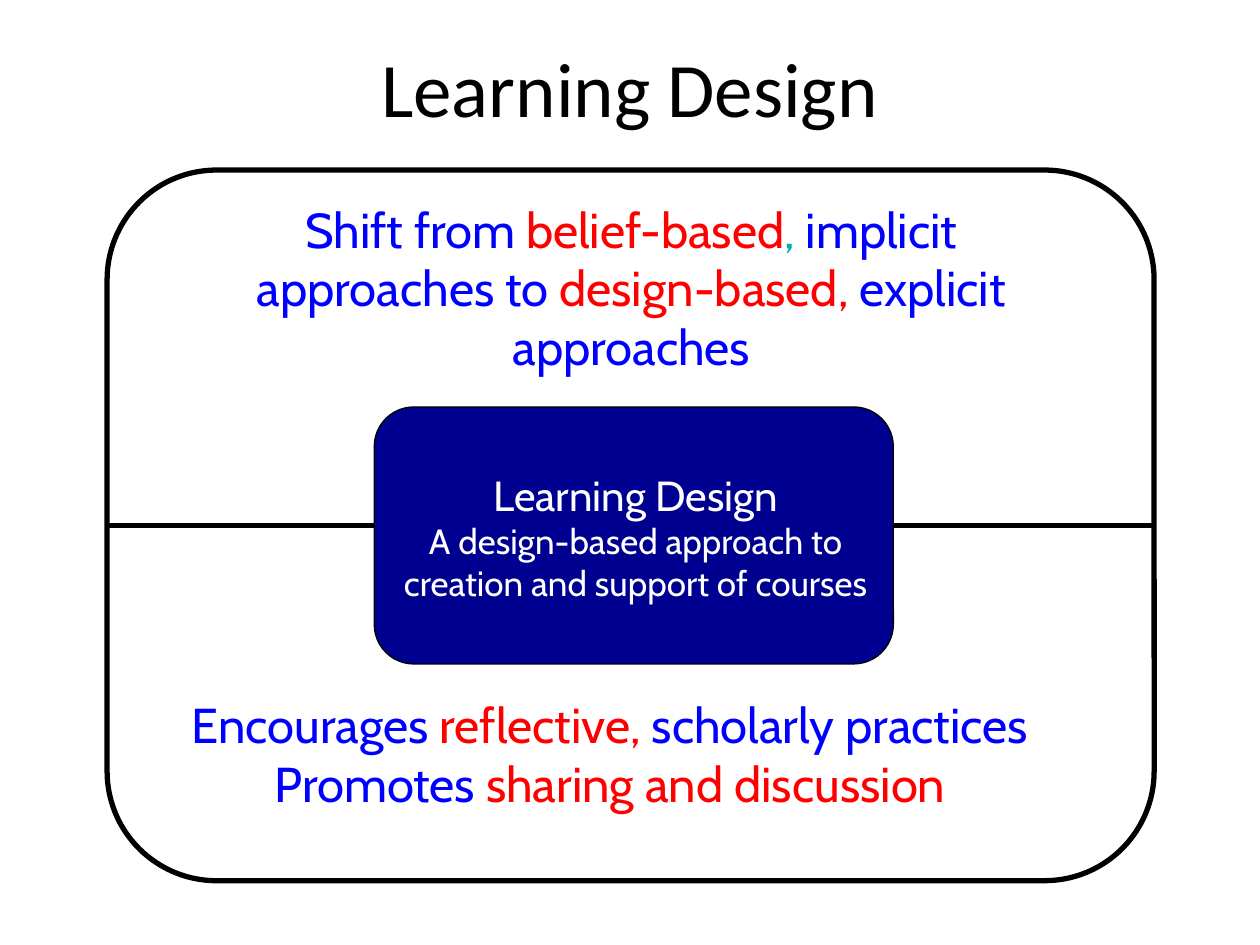
from dataclasses import dataclass

from lxml import etree
from pptx import Presentation
from pptx.dml.color import RGBColor
from pptx.enum.shapes import MSO_CONNECTOR, MSO_SHAPE
from pptx.enum.text import MSO_ANCHOR, PP_ALIGN
from pptx.oxml.ns import qn
from pptx.util import Inches, Pt

ROUNDED = MSO_SHAPE.ROUNDED_RECTANGLE
STRAIGHT = MSO_CONNECTOR.STRAIGHT
TOP = MSO_ANCHOR.TOP
MIDDLE = MSO_ANCHOR.MIDDLE
CENTER = PP_ALIGN.CENTER

BLACK = "000000"
WHITE = "FFFFFF"
BLUE = "0000FF"
RED = "FF0000"
TEAL = "00AFAD"
NAVY = "000090"
CORNER = 0.154


@dataclass(frozen=True)
class Area:
    left: float
    top: float
    width: float
    height: float

    def lengths(self) -> tuple:
        return tuple(map(Inches, (self.left, self.top, self.width, self.height)))


@dataclass(frozen=True)
class Span:
    text: str
    color: str
    size: int = 28


@dataclass(frozen=True)
class Label:
    area: Area
    lines: list[list[Span]]
    anchor: MSO_ANCHOR = TOP
    font: str = "Cabin"
    margin: float = 0.04


@dataclass(frozen=True)
class Panel:
    area: Area
    line_width: float
    fill: str | None = None


TITLE = Label(
    Area(0.5, 0.27, 9, 0.84),
    [[Span("Learning Design", BLACK, 44)]],
    MIDDLE, "Calibri", 0.1,
)
SHIFT = Label(
    Area(1.95, 1.54, 6.12, 1.42),
    [[
        Span("Shift from ", BLUE),
        Span("belief-based", RED),
        Span(", ", TEAL),
        Span("implicit approaches to ", BLUE),
        Span("design-based, ", RED),
        Span("explicit approaches", BLUE),
    ]],
)
PRACTICES = Label(
    Area(1.46, 5.47, 6.76, 0.97),
    [
        [
            Span("Encourages ", BLUE),
            Span("reflective, ", RED),
            Span("scholarly practices", BLUE),
        ],
        [Span("Promotes ", BLUE), Span("sharing and discussion", RED)],
    ],
)
DEFINITION = Label(
    Area(3.07, 3.69, 3.95, 1.14),
    [
        [Span("Learning Design", WHITE, 24)],
        [Span("A design-based approach to creation and support of courses", WHITE, 20)],
    ],
    MIDDLE,
)
FRAME = Panel(Area(0.85, 1.35, 8.31, 5.64), 3)
CORE = Panel(Area(2.97, 3.23, 4.12, 2.04), 0.75, NAVY)


def rgb(value: str) -> RGBColor:
    return RGBColor.from_string(value)


def draw_label(page, label: Label) -> None:
    frame = page.shapes.add_textbox(*label.area.lengths()).text_frame
    frame.word_wrap = True
    frame.vertical_anchor = label.anchor
    frame.margin_left = frame.margin_right = Inches(label.margin)
    frame.margin_top = frame.margin_bottom = Inches(min(label.margin, 0.05))
    for index, line in enumerate(label.lines):
        para = frame.add_paragraph() if index else frame.paragraphs[0]
        para.alignment = CENTER
        for span in line:
            run = para.add_run()
            run.text = span.text
            run.font.name = label.font
            run.font.size = Pt(span.size)
            run.font.color.rgb = rgb(span.color)


def draw_panel(page, panel: Panel) -> None:
    box = page.shapes.add_shape(ROUNDED, *panel.area.lengths())
    box.adjustments[0] = CORNER
    box.shadow.inherit = False
    box.line.color.rgb = rgb(BLACK)
    box.line.width = Pt(panel.line_width)
    if panel.fill:
        box.fill.solid()
        box.fill.fore_color.rgb = rgb(panel.fill)
    else:
        box.fill.background()


def draw_divider(page, frame: Area) -> None:
    middle = Inches(frame.top + frame.height / 2)
    left, right = Inches(frame.left), Inches(frame.left + frame.width)
    divider = page.shapes.add_connector(STRAIGHT, left, middle, right, middle)
    divider.line.color.rgb = rgb(BLACK)
    divider.line.width = Pt(3)
    properties = divider._element.find(qn("p:spPr"))
    etree.SubElement(properties, qn("a:effectLst"))


def main() -> None:
    deck = Presentation()
    deck.slide_width, deck.slide_height = Inches(10), Inches(7.5)
    page = deck.slides.add_slide(deck.slide_layouts[6])
    draw_label(page, TITLE)
    draw_divider(page, FRAME.area)
    draw_panel(page, FRAME)
    draw_label(page, SHIFT)
    draw_label(page, PRACTICES)
    draw_panel(page, CORE)
    draw_label(page, DEFINITION)
    deck.save("out.pptx")


if __name__ == "__main__":
    main()
